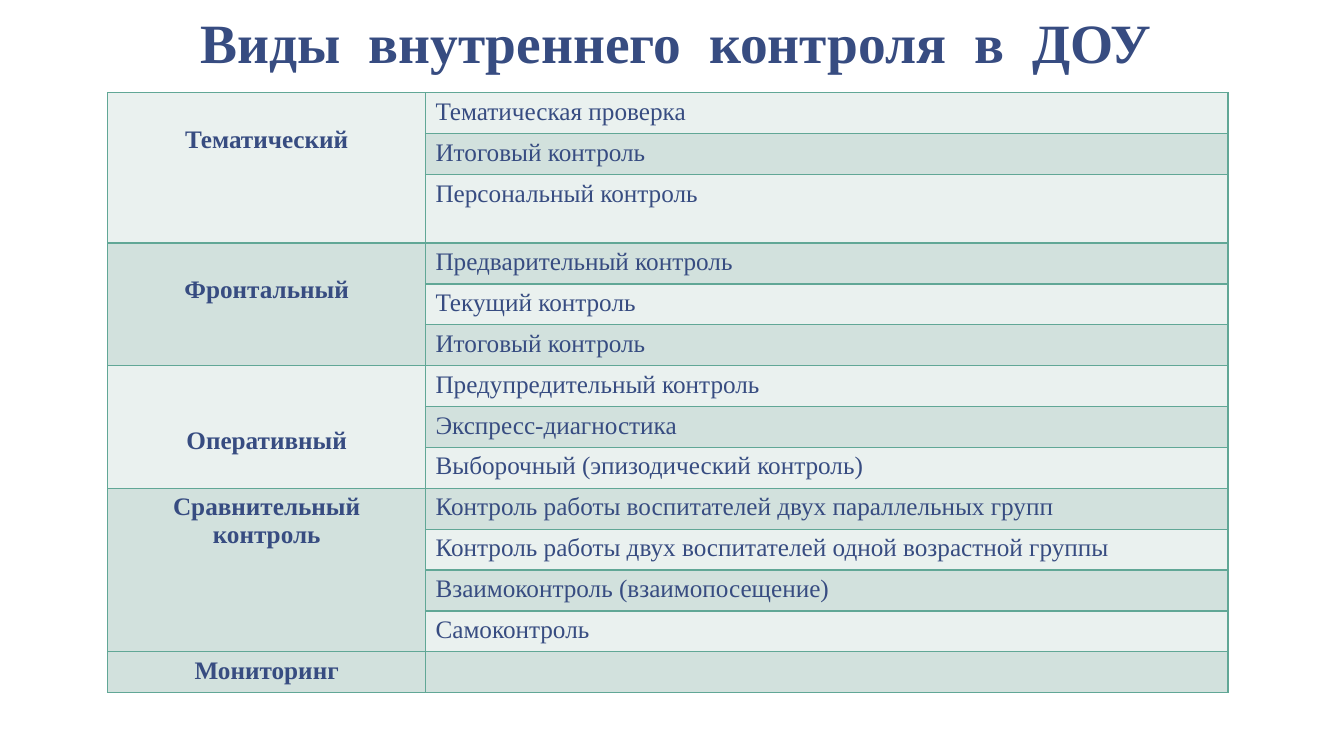
from dataclasses import dataclass

from lxml import etree
from pptx import Presentation
from pptx import util as u
from pptx.dml.color import RGBColor
from pptx.enum import text as t
from pptx.oxml import ns
from pptx.slide import Slide
from pptx.table import Table, _Cell
from pptx.text.text import _Paragraph

NAVY = RGBColor(0x37, 0x4C, 0x81)
GREEN = RGBColor(0x61, 0xA7, 0x96)
PALE = RGBColor(0xEA, 0xF1, 0xEF)
MINT = RGBColor(0xD2, 0xE1, 0xDD)
FONT = "Times New Roman"
ROW = 5.68 / 14
TALL = 0.65
LINE = 0.28


@dataclass(frozen=True)
class Group:
    name: str
    drop: int
    items: tuple[str, ...]


GROUPS = (
    Group("Тематический", 1, (
        "Тематическая проверка",
        "Итоговый контроль",
        "Персональный контроль",
    )),
    Group("Фронтальный", 1, (
        "Предварительный контроль",
        "Текущий контроль",
        "Итоговый контроль",
    )),
    Group("Оперативный", 2, (
        "Предупредительный контроль",
        "Экспресс-диагностика",
        "Выборочный (эпизодический контроль)",
    )),
    Group("Сравнительный контроль", 0, (
        "Контроль работы воспитателей двух параллельных групп",
        "Контроль работы двух воспитателей одной возрастной группы",
        "Взаимоконтроль (взаимопосещение)",
        "Самоконтроль",
    )),
    Group("Мониторинг", 0, ("",)),
)


def style(para: _Paragraph, size: float, bold: bool) -> None:
    for font in (para.font, *(run.font for run in para.runs)):
        font.name = FONT
        font.size = u.Pt(size)
        font.bold = bold
        font.color.rgb = NAVY


def border(cell: _Cell) -> None:
    props = cell._tc.get_or_add_tcPr()
    for side in ("lnL", "lnR", "lnT", "lnB"):
        line = etree.SubElement(props, ns.qn(f"a:{side}"), w=str(u.Pt(1)))
        fill = etree.SubElement(line, ns.qn("a:solidFill"))
        etree.SubElement(fill, ns.qn("a:srgbClr"), val=str(GREEN))


def paint(cell: _Cell, row: int) -> None:
    border(cell)
    cell.fill.solid()
    cell.fill.fore_color.rgb = MINT if row % 2 else PALE


def write(cell: _Cell, words: str, bold: bool) -> None:
    cell.text_frame.text = words
    para = cell.text_frame.paragraphs[0]
    para.alignment = t.PP_ALIGN.CENTER if bold else t.PP_ALIGN.LEFT
    style(para, 18, bold)


def add_group(table: Table, group: Group, top: int) -> None:
    last = top + len(group.items) - 1
    for row, item in enumerate(group.items, top):
        paint(table.cell(row, 0), top)
        paint(table.cell(row, 1), row)
        write(table.cell(row, 1), item, False)
    head = table.cell(top, 0)
    if last > top:
        head.merge(table.cell(last, 0))
    write(head, group.name, True)
    head.margin_top = u.Inches(0.05 + LINE * group.drop)


def add_title(slide: Slide) -> None:
    box = slide.shapes.add_textbox(
        u.Inches(1.15), u.Inches(0.21), u.Inches(11.11), u.Inches(0.6))
    frame = box.text_frame
    frame.word_wrap = True
    frame.vertical_anchor = t.MSO_ANCHOR.BOTTOM
    frame.margin_left = frame.margin_right = u.Inches(0.13)
    frame.margin_top = frame.margin_bottom = u.Inches(0.07)
    frame.text = "Виды  внутреннего  контроля  в  ДОУ"
    para = frame.paragraphs[0]
    para.alignment = t.PP_ALIGN.CENTER
    para.line_spacing = 0.85
    style(para, 39.6, True)


def add_table(slide: Slide) -> None:
    count = sum(len(group.items) for group in GROUPS)
    table = slide.shapes.add_table(
        count, 2, u.Inches(1.07), u.Inches(0.92),
        u.Inches(11.11), u.Inches(ROW * (count - 1) + TALL)).table
    table.first_row = False
    table.horz_banding = False
    for col, width in zip(table.columns, (3.15, 7.96)):
        col.width = u.Inches(width)
    for row in table.rows:
        row.height = u.Inches(ROW)
    table.rows[2].height = u.Inches(TALL)
    top = 0
    for group in GROUPS:
        add_group(table, group, top)
        top += len(group.items)


def main() -> None:
    deck = Presentation()
    deck.slide_width = u.Inches(13.33)
    deck.slide_height = u.Inches(7.5)
    slide = deck.slides.add_slide(deck.slide_layouts[6])
    add_title(slide)
    add_table(slide)
    deck.save("out.pptx")


if __name__ == "__main__":
    main()
